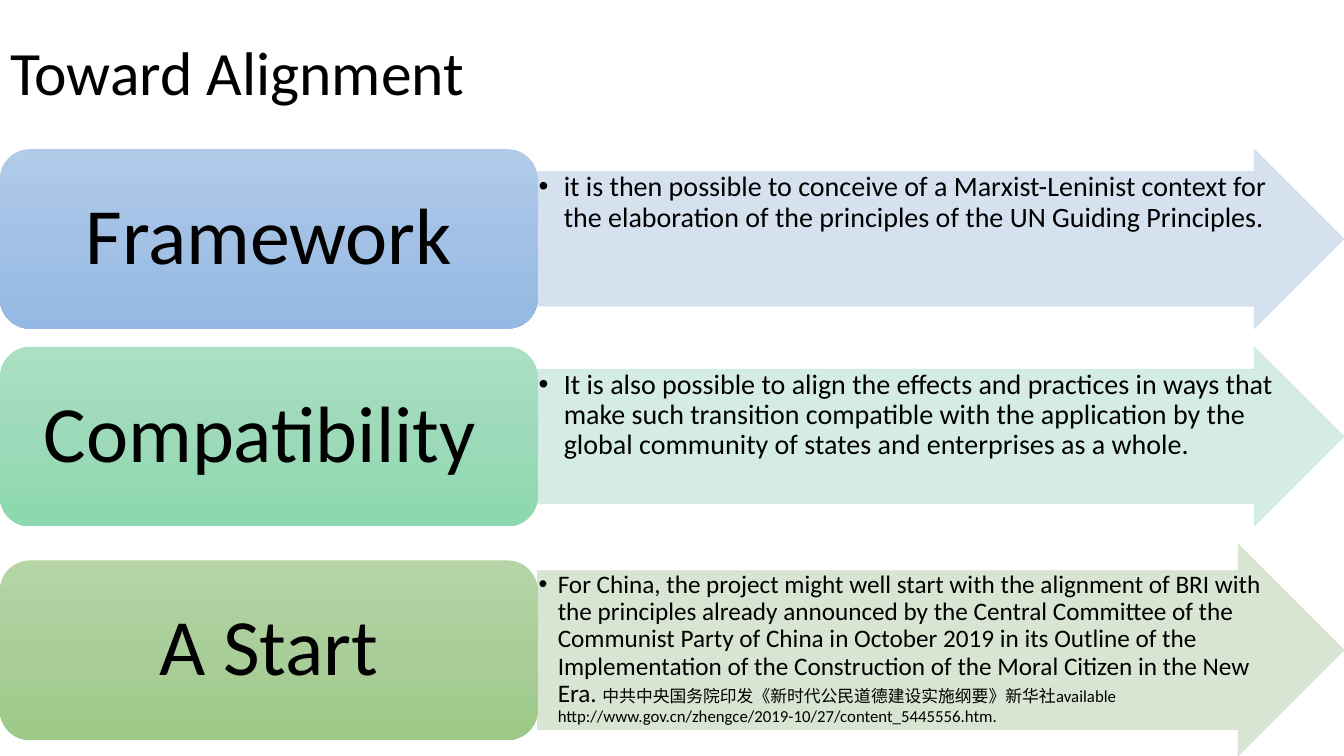
import copy

import pptx
import pptx.dml.color
import pptx.enum.shapes
import pptx.enum.text
import pptx.oxml
import pptx.oxml.ns
import pptx.util

Inches = pptx.util.Inches
Pt = pptx.util.Pt
SHAPES = pptx.enum.shapes.MSO_SHAPE
ALIGN = pptx.enum.text.PP_ALIGN
ANCHOR = pptx.enum.text.MSO_ANCHOR
qn = pptx.oxml.ns.qn

WIDTH, HEIGHT = 13.33, 7.5
LABEL_WIDTH = 0.4 * WIDTH
LABEL_HEIGHT = 1.78
FIRST_ROW, ROW_PITCH = 1.48, 1.96

COLOURS = {
    "text": "000000",
    "blue": {"arrow": "D2DEEF", "label": ["B1CBE9", "A3C1E5", "93B9E4"]},
    "mint": {"arrow": "D0EAE1", "label": ["ABE0C3", "9DDAB9", "8CD8AF"]},
    "green": {"arrow": "D5E3CF", "label": ["B5D5A7", "AACE9A", "9CC987"]},
}

ROWS = [
    {"label": "Framework", "palette": "blue", "indent": 0.25, "height": LABEL_HEIGHT,
     "runs": [("it is then possible to conceive of a Marxist-Leninist context for the "
               "elaboration of the principles of the UN Guiding Principles.", 20)]},
    {"label": "Compatibility ", "palette": "mint", "indent": 0.25, "height": LABEL_HEIGHT,
     "runs": [("It is also possible to align the effects and practices in ways that make "
               "such transition compatible with the application by the global community of "
               "states and enterprises as a whole.", 20)]},
    {"label": "A Start", "palette": "green", "indent": 0.19, "height": 2.1,
     "runs": [("For China, the project might well start with the alignment of BRI with the "
               "principles already announced by the Central Committee of the Communist Party "
               "of China in October 2019 in its Outline of the Implementation of the "
               "Construction of the Moral Citizen in the New Era. ", 18),
              ("中共中央国务院印发《新时代公民道德建设实施纲要》新华社available "
               "http://www.gov.cn/zhengce/2019-10/27/content_5445556.htm.", 12)]},
]


def rgb(value):
    """Turn a hex string into a colour."""
    return pptx.dml.color.RGBColor.from_string(value)


def format_frame(frame, anchor, insets=None):
    """Set wrapping, anchor and insets (left, top, right, bottom) of a text frame."""
    settings = {"word_wrap": True, "auto_size": pptx.enum.text.MSO_AUTO_SIZE.NONE,
                "vertical_anchor": anchor}
    for side, inset in zip(("left", "top", "right", "bottom"), insets or ()):
        settings["margin_" + side] = Inches(inset)
    for name, value in settings.items():
        setattr(frame, name, value)


def write_runs(para, runs, alignment):
    """Fill a paragraph with (text, size) runs."""
    for name, value in {"alignment": alignment, "line_spacing": 0.9}.items():
        setattr(para, name, value)
    for text, size in runs:
        span = para.add_run()
        span.text = text
        for name, value in {"name": "Calibri", "size": Pt(size)}.items():
            setattr(span.font, name, value)
        span.font.color.rgb = rgb(COLOURS["text"])


def add_bullet(para, indent):
    """Give a paragraph a round bullet with a hanging indent."""
    properties = para._p.get_or_add_pPr()
    properties.set("marL", str(Inches(indent)))
    properties.set("indent", str(-Inches(indent)))
    namespace = pptx.oxml.ns.nsdecls("a")
    for tag in ('buFont {} typeface="Arial"', 'buChar {} char="•"'):
        properties.append(pptx.oxml.parse_xml(f"<a:{tag.format(namespace)}/>"))


def fill_gradient(shape, colours):
    """Fill a shape from top to bottom with three evenly spaced colours."""
    shape.fill.gradient()
    shape.fill.gradient_angle = 270
    first = shape._element.spPr.find(".//" + qn("a:gs"))
    first.addnext(copy.deepcopy(first))
    for index, (stop, colour) in enumerate(zip(shape.fill.gradient_stops, colours)):
        stop.position = index / 2
        stop.color.rgb = rgb(colour)


def fill_translucent(shape, colour):
    """Fill and outline a shape in one colour at 90 % opacity."""
    shape.fill.solid()
    shape.line.width = Pt(0.5)
    for color in (shape.fill.fore_color, shape.line.color):
        color.rgb = rgb(colour)
    for node in shape._element.spPr.iter(qn("a:srgbClr")):
        node.append(pptx.oxml.parse_xml(
            f'<a:alpha {pptx.oxml.ns.nsdecls("a")} val="90000"/>'))


def add_block(slide, kind, left, top, width, height):
    """Add a shadowless preset shape."""
    shape = slide.shapes.add_shape(
        kind, *(Inches(length) for length in (left, top, width, height)))
    shape.shadow.inherit = False
    return shape


def add_title(slide, left, top, width, height):
    """Place and write the slide title."""
    title = slide.shapes.title
    box = {"left": left, "top": top, "width": width, "height": height}
    for name, value in box.items():
        setattr(title, name, Inches(value))
    format_frame(title.text_frame, ANCHOR.MIDDLE)
    write_runs(title.text_frame.paragraphs[0], [("Toward Alignment", 44)], ALIGN.LEFT)


def add_row(slide, row, top):
    """Draw an arrow with its statement and the label centred on its left."""
    palette, height = COLOURS[row["palette"]], row["height"]
    arrow = add_block(slide, SHAPES.RIGHT_ARROW, LABEL_WIDTH, top,
                      WIDTH - LABEL_WIDTH, height)
    arrow.adjustments[0] = 0.75
    fill_translucent(arrow, palette["arrow"])
    format_frame(arrow.text_frame, ANCHOR.TOP, [0.01] * 4)
    para = arrow.text_frame.paragraphs[0]
    add_bullet(para, row["indent"])
    write_runs(para, row["runs"], ALIGN.LEFT)

    label = add_block(slide, SHAPES.ROUNDED_RECTANGLE, 0,
                      top + (height - LABEL_HEIGHT) / 2, LABEL_WIDTH, LABEL_HEIGHT)
    fill_gradient(label, palette["label"])
    label.line.fill.background()
    format_frame(label.text_frame, ANCHOR.MIDDLE, (0.24, 0.12, 0.24, 0.12))
    write_runs(label.text_frame.paragraphs[0], [(row["label"], 57)], ALIGN.CENTER)


def main():
    """Build the slide and save it."""
    deck = pptx.Presentation()
    deck.slide_width, deck.slide_height = Inches(WIDTH), Inches(HEIGHT)
    slide = deck.slides.add_slide(deck.slide_layouts[5])
    add_title(slide, 0, 0.02, 0.43 * WIDTH, 1.45)
    for index, row in enumerate(ROWS):
        add_row(slide, row, FIRST_ROW + index * ROW_PITCH)
    deck.save("out.pptx")


if __name__ == "__main__":
    main()
